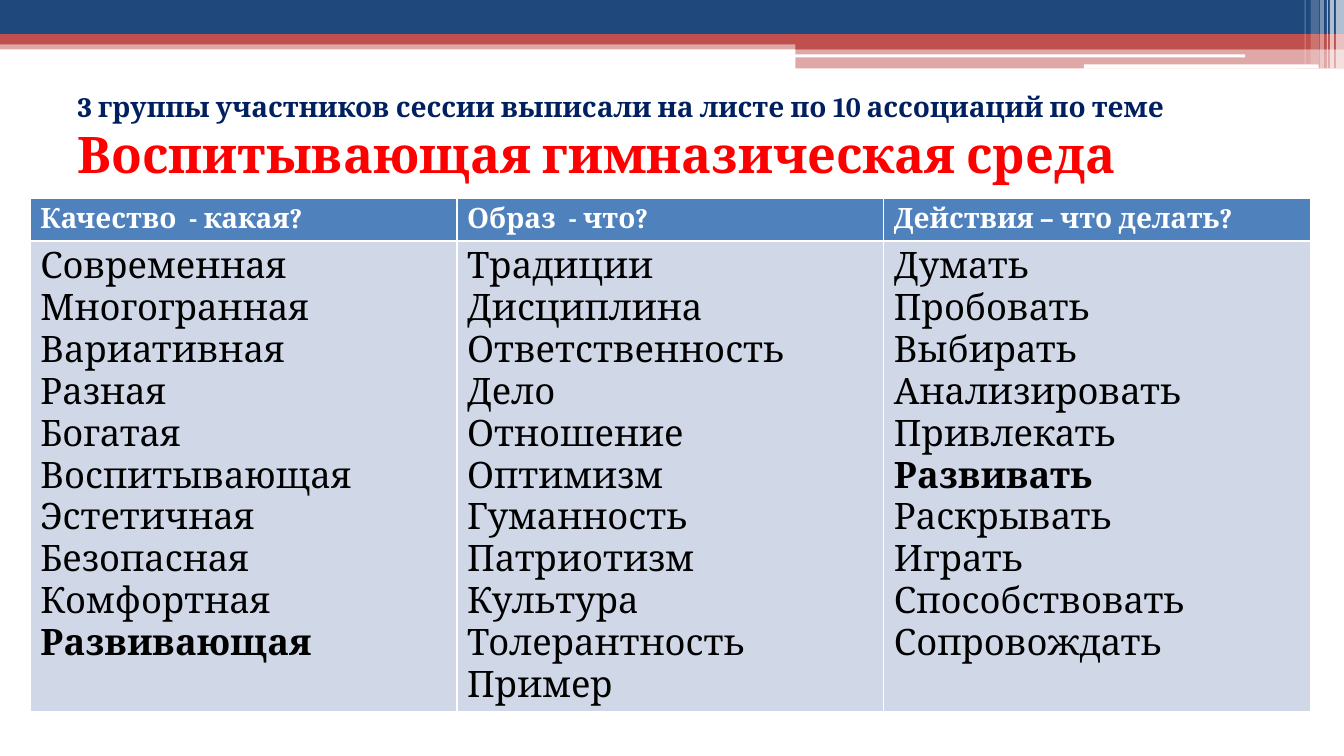
import pptx
import pptx.util
import pptx.dml.color
import pptx.enum.shapes
import pptx.enum.text
import lxml.etree

Inches = pptx.util.Inches
SHAPE = pptx.enum.shapes.MSO_SHAPE
FONT = "Cambria"
NAVY, BRICK, WHITE = "1F497D", "C0504D", "FFFFFF"

# left, top, width, height, colour, opacity in percent
BANDS = [
    (0, 0.4, 13.33, 0.09, BRICK, 50),
    (0, 0, 13.33, 0.34, NAVY, 100),
    (0, 0.34, 13.33, 0.1, BRICK, 100),
    (7.89, 0.39, 5.44, 0.1, BRICK, 100),
    (7.89, 0.48, 5.44, 0.2, BRICK, 50),
]
SLOTS = [(7.88, 0.54, 4.47, 0.03), (10.75, 0.64, 2.33, 0.04)]
# left, width, height, opacity in percent
STRIPES = [
    (13.25, 0.08, 0.68, 65),
    (13.19, 0.04, 0.68, 65),
    (13.16, 0.01, 0.68, 60),
    (13.09, 0.04, 0.68, 40),
    (13, 0.08, 0.64, 20),
    (12.94, 0.01, 0.64, 30),
]
TITLE = [
    ("3 группы участников сессии выписали на листе по 10 ассоциаций по теме",
     20, "002060"),
    ("Воспитывающая гимназическая среда", 36, "FF0000"),
]
COLUMNS = {
    "Качество  - какая?": [
        "Современная", "Многогранная", "Вариативная", "Разная", "Богатая",
        "Воспитывающая", "Эстетичная", "Безопасная", "Комфортная",
        "Развивающая"],
    "Образ  - что?": [
        "Традиции", "Дисциплина", "Ответственность", "Дело", "Отношение",
        "Оптимизм", "Гуманность", "Патриотизм", "Культура", "Толерантность",
        "Пример"],
    "Действия – что делать?": [
        "Думать", "Пробовать", "Выбирать", "Анализировать", "Привлекать",
        "Развивать", "Раскрывать", "Играть", "Способствовать",
        "Сопровождать"],
}
STRONG = {"Развивающая", "Развивать"}


def paint(fill, color, alpha=100):
    fill.solid()
    fill.fore_color.rgb = pptx.dml.color.RGBColor.from_string(color)
    if alpha < 100:
        tone = fill.fore_color._xFill[0]
        tag = pptx.oxml.ns.qn("a:alpha")
        lxml.etree.SubElement(tone, tag).set("val", str(alpha * 1000))


def write(para, text, size, color, bold):
    para.text = text
    font = para.font
    font.name, font.size, font.bold = FONT, pptx.util.Pt(size), bold
    paint(font.fill, color)


def add_bar(slide, box, color, alpha=100, kind=SHAPE.RECTANGLE):
    bar = slide.shapes.add_shape(kind, *map(Inches, box))
    bar.shadow.inherit = False
    bar.line.fill.background()
    paint(bar.fill, color, alpha)


def add_header(slide, left, top):
    """Draw the banner, its slots and the light stripes at its right end."""
    for x, y, wide, high, color, alpha in BANDS:
        add_bar(slide, (left + x, top + y, wide, high), color, alpha)
    for x, y, wide, high in SLOTS:
        add_bar(slide, (left + x, top + y, wide, high), WHITE,
                kind=SHAPE.ROUNDED_RECTANGLE)
    for x, wide, high, alpha in STRIPES:
        add_bar(slide, (left + x, top, wide, high), WHITE, alpha)


def set_title(slide, left, top, width, height):
    title = slide.shapes.title
    title.left, title.top = Inches(left), Inches(top)
    title.width, title.height = Inches(width), Inches(height)
    frame = title.text_frame
    frame.word_wrap = True
    frame.auto_size = pptx.enum.text.MSO_AUTO_SIZE.NONE
    frame.vertical_anchor = pptx.enum.text.MSO_ANCHOR.MIDDLE
    for i, (text, size, color) in enumerate(TITLE):
        para = frame.add_paragraph() if i else frame.paragraphs[0]
        para.alignment = pptx.enum.text.PP_ALIGN.LEFT
        write(para, text, size, color, True)


def add_words(slide, left, top, width, height):
    """Add the table: a heading and a list of words in each column."""
    head = 0.41
    table = slide.shapes.add_table(
        2, len(COLUMNS), *map(Inches, (left, top, width, height))).table
    table.rows[0].height = Inches(head)
    table.rows[1].height = Inches(height - head)
    for col, (name, words) in enumerate(COLUMNS.items()):
        cell = table.cell(0, col)
        paint(cell.fill, "4F81BD")
        write(cell.text_frame.paragraphs[0], name, 20, WHITE, True)
        cell = table.cell(1, col)
        paint(cell.fill, "D0D8E8")
        frame = cell.text_frame
        for i, word in enumerate(words):
            para = frame.add_paragraph() if i else frame.paragraphs[0]
            write(para, word, 26, "000000", word in STRONG)


def main():
    deck = pptx.Presentation()
    deck.slide_width, deck.slide_height = Inches(13.33), Inches(7.5)
    slide = deck.slides.add_slide(deck.slide_layouts[5])
    add_header(slide, 0, 0)
    set_title(slide, 0.67, 0.83, 12, 1.05)
    add_words(slide, 0.3, 1.97, 12.7, 5.08)
    deck.save("out.pptx")


if __name__ == "__main__":
    main()
